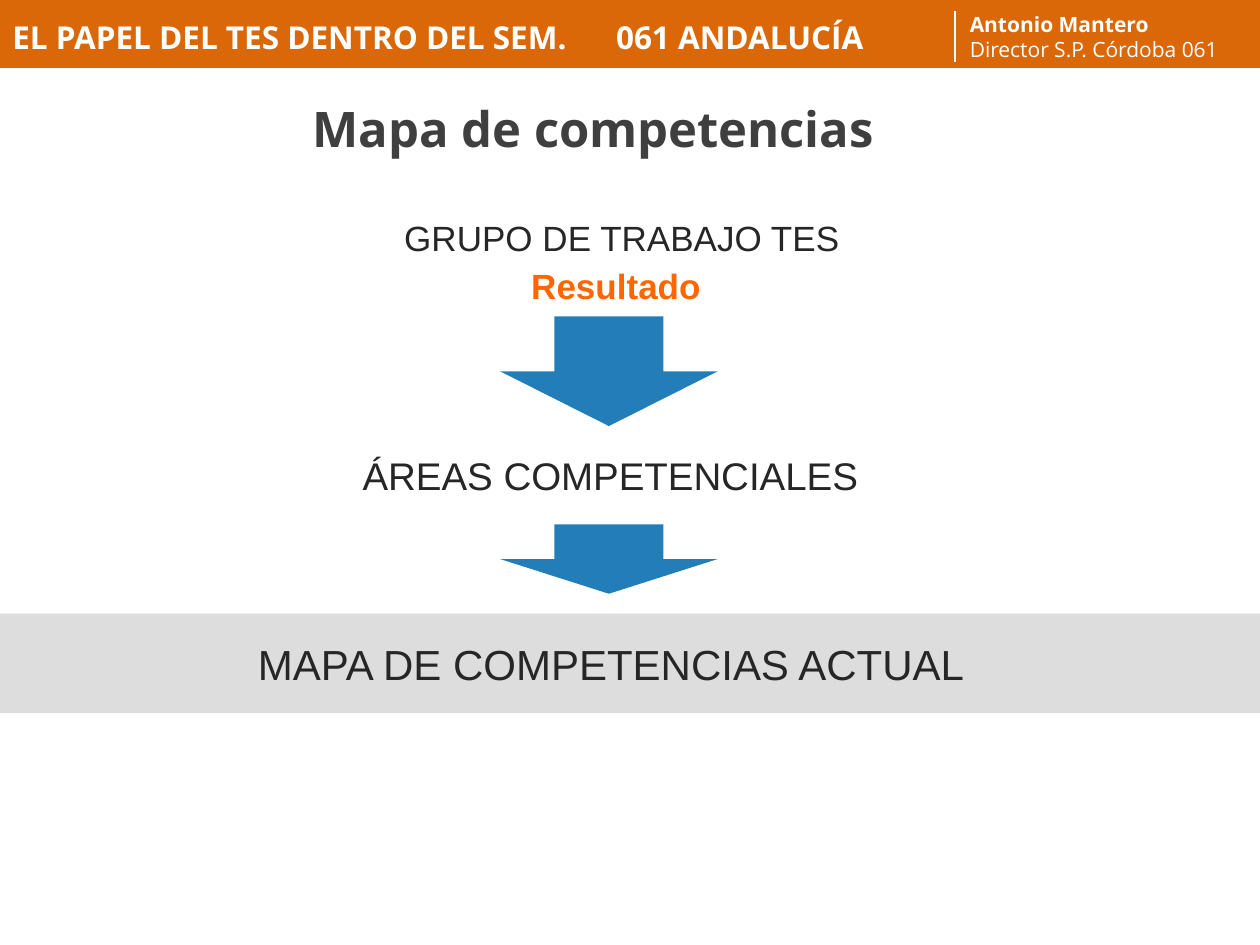
"""Build the slide on the competency map of the TES working group."""
from dataclasses import dataclass

from lxml.etree import SubElement
from pptx import Presentation
from pptx.dml.color import RGBColor
from pptx.enum.shapes import MSO_CONNECTOR, MSO_SHAPE
from pptx.enum.text import MSO_ANCHOR, MSO_AUTO_SIZE, PP_ALIGN
from pptx.oxml.ns import qn
from pptx.util import Cm, Pt


@dataclass(frozen=True)
class Theme:
    heading_font: str = "Open Sans"
    body_font: str = "Arial"
    header: str = "DA6708"
    white: str = "FFFFFF"
    title: str = "3F3F3F"
    body: str = "262626"
    accent: str = "FF6600"
    arrow: str = "237DB9"
    band: str = "DDDDDD"
    title_size: int = 28
    header_size: int = 18
    contact_size: int = 12
    step_size: int = 20
    area_size: int = 22
    map_size: int = 24


THEME = Theme()
PAGE_WIDTH, PAGE_HEIGHT = 25.4, 19.05
HEADER_TAB = 12.17
DIVIDER = (19.25, 0.23, 19.25, 1.24)

BLOCKS = [
    (MSO_SHAPE.RECTANGLE, (0, 0, PAGE_WIDTH, 1.37), THEME.header),
    (MSO_SHAPE.RECTANGLE, (0, 12.37, PAGE_WIDTH, 2.01), THEME.band),
    (MSO_SHAPE.DOWN_ARROW, (10.08, 6.38, 4.39, 2.21), THEME.arrow),
    (MSO_SHAPE.DOWN_ARROW, (10.08, 10.57, 4.39, 1.4), THEME.arrow),
]
TITLE = ("Mapa de competencias", (6.05, 1.85, 13.3, 1.45))
HEADER = ("EL PAPEL DEL TES DENTRO DEL SEM.\t061 ANDALUCÍA", (0, 0.23, 19.3, 1.02))
CONTACT = (("Antonio Mantero", "Director S.P. Córdoba 061"), (19.3, 0.1, 6.1, 1.27))
STEPS = [
    ("GRUPO DE TRABAJO TES", (7.9, 4.24, 9.4, 1.09), THEME.step_size, THEME.body, False),
    ("Resultado", (10.46, 5.21, 4.05, 1.09), THEME.step_size, THEME.accent, True),
    ("ÁREAS COMPETENCIALES", (7.06, 8.99, 11.1, 1.19), THEME.area_size, THEME.body, False),
    ("MAPA DE COMPETENCIAS ACTUAL", (4.95, 12.75, 15, 1.1), THEME.map_size, THEME.body, False),
]


def lengths(values):
    return [Cm(value) for value in values]


def add_block(page, kind, place, color):
    block = page.shapes.add_shape(kind, *lengths(place))
    block.shadow.inherit = False
    block.fill.solid()
    block.fill.fore_color.rgb = RGBColor.from_string(color)
    block.line.fill.background()


def prepare(box):
    frame = box.text_frame
    frame.word_wrap = True
    frame.auto_size = MSO_AUTO_SIZE.NONE
    frame.vertical_anchor = MSO_ANCHOR.TOP
    paragraph = frame.paragraphs[0]
    paragraph.alignment = PP_ALIGN.LEFT
    return paragraph


def add_text_box(page, place):
    return prepare(page.shapes.add_textbox(*lengths(place)))


def add_span(paragraph, text, font, size, color, bold):
    span = paragraph.add_run()
    span.text = text
    span.font.name = font
    span.font.size = Pt(size)
    span.font.bold = bold
    span.font.color.rgb = RGBColor.from_string(color)


def add_header(page):
    text, place = HEADER
    paragraph = add_text_box(page, place)
    tabs = SubElement(paragraph._p.get_or_add_pPr(), qn("a:tabLst"))
    SubElement(tabs, qn("a:tab"), pos=str(Cm(HEADER_TAB)), algn="l")
    add_span(paragraph, text, THEME.heading_font, THEME.header_size, THEME.white, True)

    (name, role), place = CONTACT
    paragraph = add_text_box(page, place)
    add_span(paragraph, name, THEME.heading_font, THEME.contact_size, THEME.white, True)
    paragraph.add_line_break()
    add_span(paragraph, role, THEME.heading_font, THEME.contact_size, THEME.white, False)

    divider = page.shapes.add_connector(MSO_CONNECTOR.STRAIGHT, *lengths(DIVIDER))
    divider.line.color.rgb = RGBColor.from_string(THEME.white)
    divider.line.width = Pt(0.75)
    SubElement(divider._element.spPr, qn("a:effectLst"))


def add_title(page):
    text, place = TITLE
    box = page.shapes.title
    box.left, box.top, box.width, box.height = lengths(place)
    add_span(prepare(box), text, THEME.heading_font, THEME.title_size, THEME.title, True)


def main():
    deck = Presentation()
    deck.slide_width, deck.slide_height = lengths((PAGE_WIDTH, PAGE_HEIGHT))
    page = deck.slides.add_slide(deck.slide_layouts[5])
    for kind, place, color in BLOCKS:
        add_block(page, kind, place, color)
    add_header(page)
    add_title(page)
    for text, place, size, color, bold in STEPS:
        add_span(add_text_box(page, place), text, THEME.body_font, size, color, bold)
    deck.save("out.pptx")


if __name__ == "__main__":
    main()
